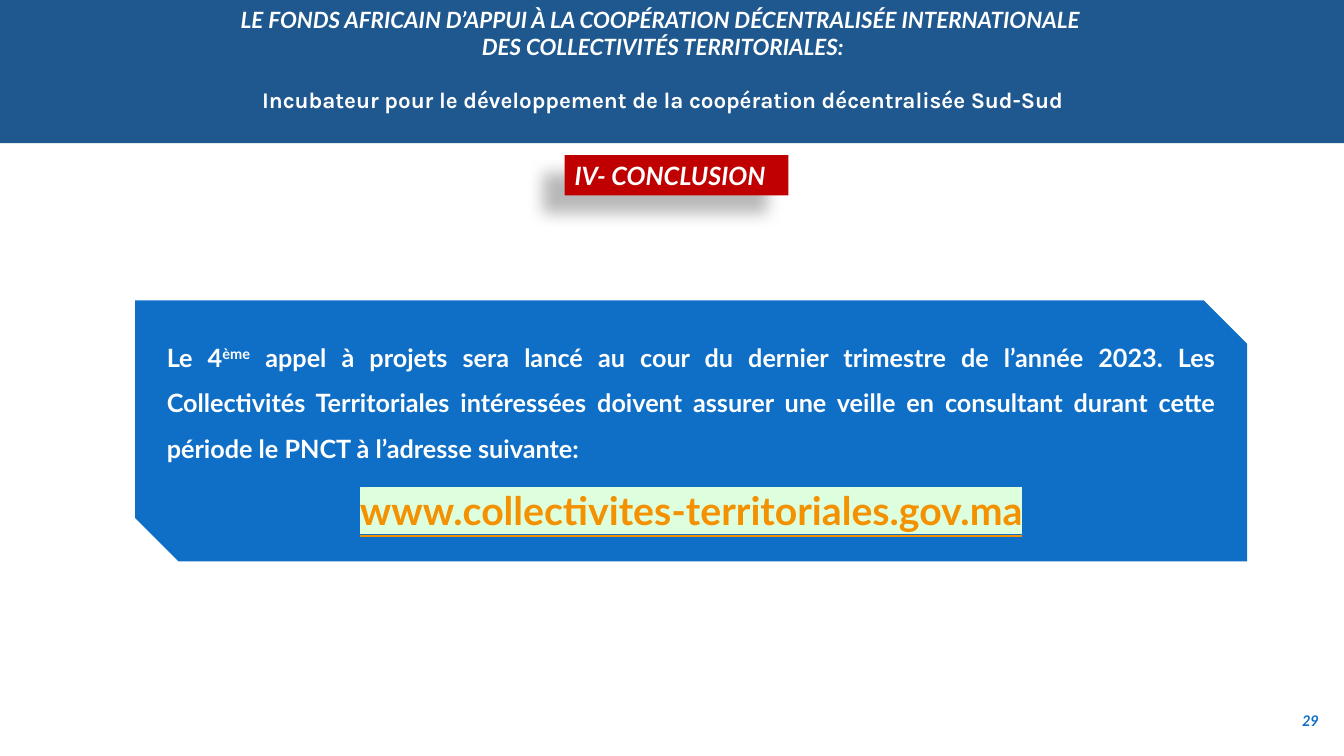
import pptx
import pptx.util
import pptx.dml.color
import pptx.enum.shapes
import pptx.enum.text
import pptx.oxml
import pptx.oxml.ns

Inches, Pt = pptx.util.Inches, pptx.util.Pt
RGBColor = pptx.dml.color.RGBColor
MSO_SHAPE = pptx.enum.shapes.MSO_SHAPE
ANCHOR = pptx.enum.text.MSO_ANCHOR
ALIGN = pptx.enum.text.PP_ALIGN
qn = pptx.oxml.ns.qn

NAVY = RGBColor(0x1F, 0x58, 0x8E)
BLUE = RGBColor(0x0F, 0x6F, 0xC6)
RED = RGBColor(0xC0, 0x00, 0x00)
ORANGE = RGBColor(0xF4, 0x91, 0x00)
WHITE = RGBColor(0xFF, 0xFF, 0xFF)
NS = 'xmlns:a="http://schemas.openxmlformats.org/drawingml/2006/main"'

prs = pptx.Presentation()
prs.slide_width, prs.slide_height = Inches(13.33), Inches(7.5)
s = prs.slides.add_slide(prs.slide_layouts[5])
LEFT = Inches(1.34)


def add_block(kind, left, top, width, height, color):
    """Add a flat filled shape whose text starts at its top left."""
    sp = s.shapes.add_shape(kind, left, top, width, height)
    sp.shadow.inherit = False
    sp.fill.solid()
    sp.fill.fore_color.rgb = color
    sp.line.fill.background()
    sp.text_frame.word_wrap = True
    sp.text_frame.vertical_anchor = ANCHOR.TOP
    return sp


def add_run(p, text, size, color=WHITE, italic=False, font="Lato"):
    r = p.add_run()
    r.text = text
    r.font.name, r.font.size = font, Pt(size)
    r.font.bold, r.font.italic = True, italic
    r.font.color.rgb = color
    return r


# Header band, placed behind the title
band = add_block(MSO_SHAPE.RECTANGLE, 0, 0, prs.slide_width, Inches(1.42), NAVY)
title = s.shapes.title
title._element.addprevious(band._element)
title.left, title.top, title.width, title.height = LEFT, 0, Inches(10.47), Inches(1.18)
tf = title.text_frame
tf.word_wrap = True
tf.auto_size = pptx.enum.text.MSO_AUTO_SIZE.NONE
tf.vertical_anchor = ANCHOR.MIDDLE
tf.margin_top = tf.margin_bottom = 0
p = tf.paragraphs[0]
p.alignment = ALIGN.CENTER
add_run(p, "LE FONDS AFRICAIN D’APPUI À LA COOPÉRATION DÉCENTRALISÉE INTERNATIONALE ", 16, italic=True)
p.add_line_break()
add_run(p, "DES COLLECTIVITÉS TERRITORIALES:", 16, italic=True)
p = tf.add_paragraph()
p.alignment = ALIGN.CENTER
p.space_before = Pt(19)
add_run(p, "Incubateur pour le développement de la coopération décentralisée Sud-Sud", 16, font="Karla")

# Section label with its soft shadow
label = add_block(MSO_SHAPE.RECTANGLE, Inches(5.6), Inches(1.54), Inches(2.22), Inches(0.4), RED)
label._element.spPr.find(qn("a:effectLst")).append(pptx.oxml.parse_xml(
    f'<a:outerShdw {NS} blurRad="{Pt(11.8)}" dist="{Pt(19.7)}" dir="{141 * 60000}" algn="ctr" rotWithShape="0">'
    '<a:srgbClr val="000000"><a:alpha val="28000"/></a:srgbClr></a:outerShdw>'))
p = label.text_frame.paragraphs[0]
p.alignment = ALIGN.LEFT
add_run(p, "IV- CONCLUSION", 18, italic=True)

# Announcement
panel = add_block(MSO_SHAPE.SNIP_2_DIAG_RECTANGLE, LEFT, Inches(2.98), Inches(11.03), Inches(2.59), BLUE)
p = panel.text_frame.paragraphs[0]
p.alignment, p.line_spacing = ALIGN.JUSTIFY, 1.5
add_run(p, "Le 4", 18)
add_run(p, "ème", 18).font._element.set("baseline", "30000")
add_run(p, " appel à projets sera lancé au cour du dernier trimestre de l’année 2023. "
           "Les Collectivités Territoriales intéressées doivent assurer une veille en consultant "
           "durant cette période le PNCT à l’adresse suivante:", 18)
p = panel.text_frame.add_paragraph()
p.alignment, p.line_spacing = ALIGN.CENTER, 1.5
r = add_run(p, "www.collectivites-territoriales.gov.ma", 28, ORANGE)
r.font.underline = True
r.font._element.find(qn("a:solidFill")).addnext(pptx.oxml.parse_xml(
    f'<a:highlight {NS}><a:srgbClr val="DDFFDD"/></a:highlight>'))

# Slide number
number = s.shapes.add_textbox(Inches(12.57), Inches(6.95), Inches(0.61), Inches(0.4))
tf = number.text_frame
tf.word_wrap = True
tf.vertical_anchor = ANCHOR.MIDDLE
p = tf.paragraphs[0]
p.alignment = ALIGN.RIGHT
add_run(p, "29", 10.5, BLUE, italic=True)

prs.save("out.pptx")
